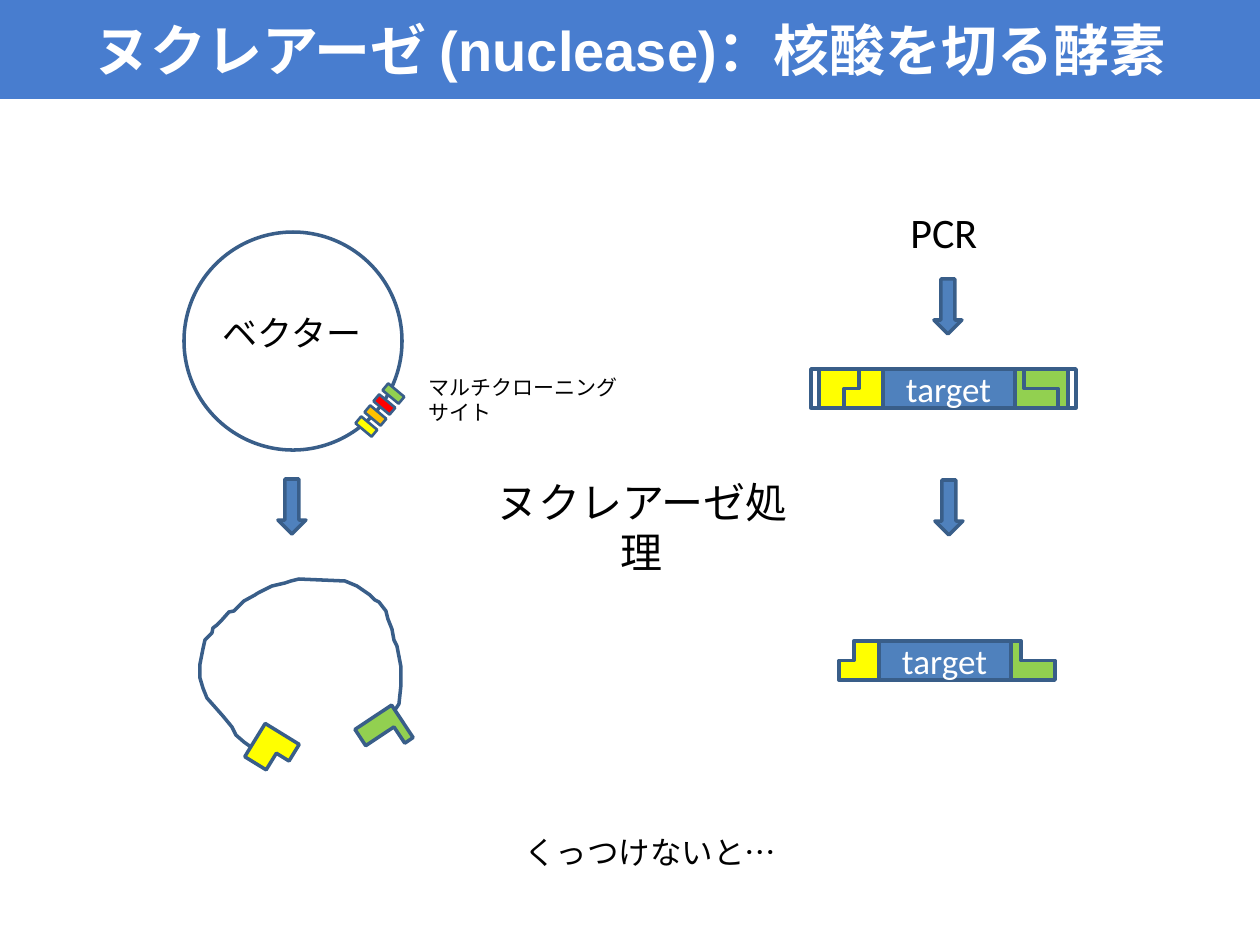
"""Builds a slide on how a nuclease cuts a vector and a PCR product."""
from pptx import Presentation
from pptx.dml.color import RGBColor
from pptx.enum.shapes import MSO_SHAPE
from pptx.enum.text import MSO_ANCHOR, MSO_AUTO_SIZE, PP_ALIGN
from pptx.util import Emu, Pt

PX = 914400 / 126
BAND = RGBColor(0x48, 0x7D, 0xCF)
BLUE = RGBColor(0x4F, 0x81, 0xBD)
OUTLINE = RGBColor(0x39, 0x5E, 0x89)
YELLOW = RGBColor(0xFF, 0xFF, 0x00)
GREEN = RGBColor(0x92, 0xD0, 0x50)
ORANGE = RGBColor(0xFF, 0xC0, 0x00)
RED = RGBColor(0xFF, 0x00, 0x00)
WHITE = RGBColor(0xFF, 0xFF, 0xFF)
BLACK = RGBColor(0x00, 0x00, 0x00)

TITLE = "ヌクレアーゼ (nuclease)：核酸を切る酵素"
LABELS = [
    (["ヌクレアーゼ処理"], (474, 470, 336, 63), 24, "Calibri", PP_ALIGN.CENTER, True),
    (["マルチクローニング", "サイト"], (416, 368, 270, 87), 12, "Calibri", PP_ALIGN.LEFT, True),
    (["ベクター"], (190, 305, 204, 76), 20, "Calibri", PP_ALIGN.CENTER, True),
    (["PCR"], (898, 200, 93, 63), 24, "Calibri", PP_ALIGN.LEFT, False),
    (["くっつけないと…"], (512, 827, 280, 50), 18, "Arial", PP_ALIGN.LEFT, False),
]
ARROWS = [(278, 479), (935, 480), (934, 279)]
CLONING_SITES = [YELLOW, ORANGE, RED, GREEN]
CUT_VECTOR = [
    (251, 747), (244, 742), (236, 735), (232, 727), (223, 716), (215, 707),
    (207, 698), (203, 688), (200, 678), (200, 664), (203, 649), (205, 640),
    (212, 633), (213, 628), (217, 625), (221, 621), (229, 612), (234, 611),
    (244, 601), (255, 595), (258, 593), (268, 588), (272, 586), (285, 583),
    (291, 581), (299, 579), (345, 581), (357, 586), (370, 595), (375, 600),
    (379, 602), (386, 611), (388, 619), (392, 629), (394, 640), (397, 646),
    (401, 667), (401, 685), (399, 704), (393, 713), (391, 717), (388, 722),
    (387, 724),
]
TARGET_WIDTH, BAR_HEIGHT = 133, 39
YELLOW_WIDTH, GREEN_WIDTH, TIP_WIDTH = 40, 44, 8


def emu(*lengths):
    return [Emu(round(length * PX)) for length in lengths]


def style(shape, fill, weight=2):
    shape.shadow.inherit = False
    if fill is None:
        shape.fill.background()
    else:
        shape.fill.solid()
        shape.fill.fore_color.rgb = fill
    shape.line.color.rgb = OUTLINE
    shape.line.width = Pt(weight)


def add_preset(slide, kind, box, fill=None, weight=2, rotation=0, adjustments=()):
    shape = slide.shapes.add_shape(kind, *emu(*box))
    style(shape, fill, weight)
    shape.rotation = rotation
    for index, value in enumerate(adjustments):
        shape.adjustments[index] = value
    return shape


def set_font(paragraph, size, name, color, alignment):
    paragraph.alignment = alignment
    paragraph.font.size = Pt(size)
    paragraph.font.name = name
    paragraph.font.color.rgb = color


def add_yellow_end(slide, left, top, rotation=0):
    box = (left, top, YELLOW_WIDTH, BAR_HEIGHT)
    shape = add_preset(slide, MSO_SHAPE.CORNER, box, YELLOW, 2, rotation, (0.5, 0.644))
    shape.element.spPr.xfrm.set("flipH", "1")


def add_green_end(slide, left, top, rotation=0):
    box = (left, top, GREEN_WIDTH, BAR_HEIGHT)
    add_preset(slide, MSO_SHAPE.CORNER, box, GREEN, 2, rotation, (0.5, 0.26))


def add_target(slide, left, top):
    box = (left, top, TARGET_WIDTH, BAR_HEIGHT)
    target = add_preset(slide, MSO_SHAPE.RECTANGLE, box, BLUE)
    frame = target.text_frame
    frame.text = "target"
    frame.vertical_anchor = MSO_ANCHOR.MIDDLE
    set_font(frame.paragraphs[0], 20, "Calibri", WHITE, PP_ALIGN.CENTER)
    add_green_end(slide, left + TARGET_WIDTH, top)
    add_yellow_end(slide, left - YELLOW_WIDTH + 1, top)


def add_title(slide):
    title = slide.shapes.title
    title.left, title.top, title.width, title.height = emu(0, 0, 1260, 98)
    frame = title.text_frame
    frame.text = TITLE
    frame.auto_size = MSO_AUTO_SIZE.NONE
    frame.vertical_anchor = MSO_ANCHOR.MIDDLE
    set_font(frame.paragraphs[0], 32, "Arial", WHITE, PP_ALIGN.CENTER)
    frame.paragraphs[0].font.bold = True
    band = add_preset(slide, MSO_SHAPE.RECTANGLE, (0, 0, 1260, 99), BAND)
    band.line.fill.background()
    title.element.addprevious(band.element)


def add_label(slide, lines, box, size, font, alignment, wrap):
    frame = slide.shapes.add_textbox(*emu(*box)).text_frame
    frame.word_wrap = wrap
    frame.text = "\n".join(lines)
    for paragraph in frame.paragraphs:
        set_font(paragraph, size, font, BLACK, alignment)


def main():
    presentation = Presentation()
    presentation.slide_width, presentation.slide_height = emu(1260, 945)
    slide = presentation.slides.add_slide(presentation.slide_layouts[5])
    add_title(slide)

    add_preset(slide, MSO_SHAPE.OVAL, (184, 232, 218, 218))
    for index, color in enumerate(CLONING_SITES):
        box = (362 + 9 * index, 416 - 11 * index, 9, 21)
        add_preset(slide, MSO_SHAPE.RECTANGLE, box, color, 1.5, 309.8)

    add_target(slide, 882, 369)
    add_yellow_end(slide, 819, 369, 180)
    add_green_end(slide, 1024, 369, 180)
    for left in (811, 1068):
        add_preset(slide, MSO_SHAPE.RECTANGLE, (left, 369, TIP_WIDTH, BAR_HEIGHT))
    add_target(slide, 878, 641)

    for left, top in ARROWS:
        add_preset(slide, MSO_SHAPE.DOWN_ARROW, (left, top, 28, 55), BLUE)

    builder = slide.shapes.build_freeform(*CUT_VECTOR[0], scale=PX)
    builder.add_line_segments(CUT_VECTOR[1:], close=False)
    style(builder.convert_to_shape(), None)
    add_yellow_end(slide, 252, 731, 211.6)
    add_green_end(slide, 362, 714, 146.4)

    for label in LABELS:
        add_label(slide, *label)
    presentation.save("out.pptx")


if __name__ == "__main__":
    main()
